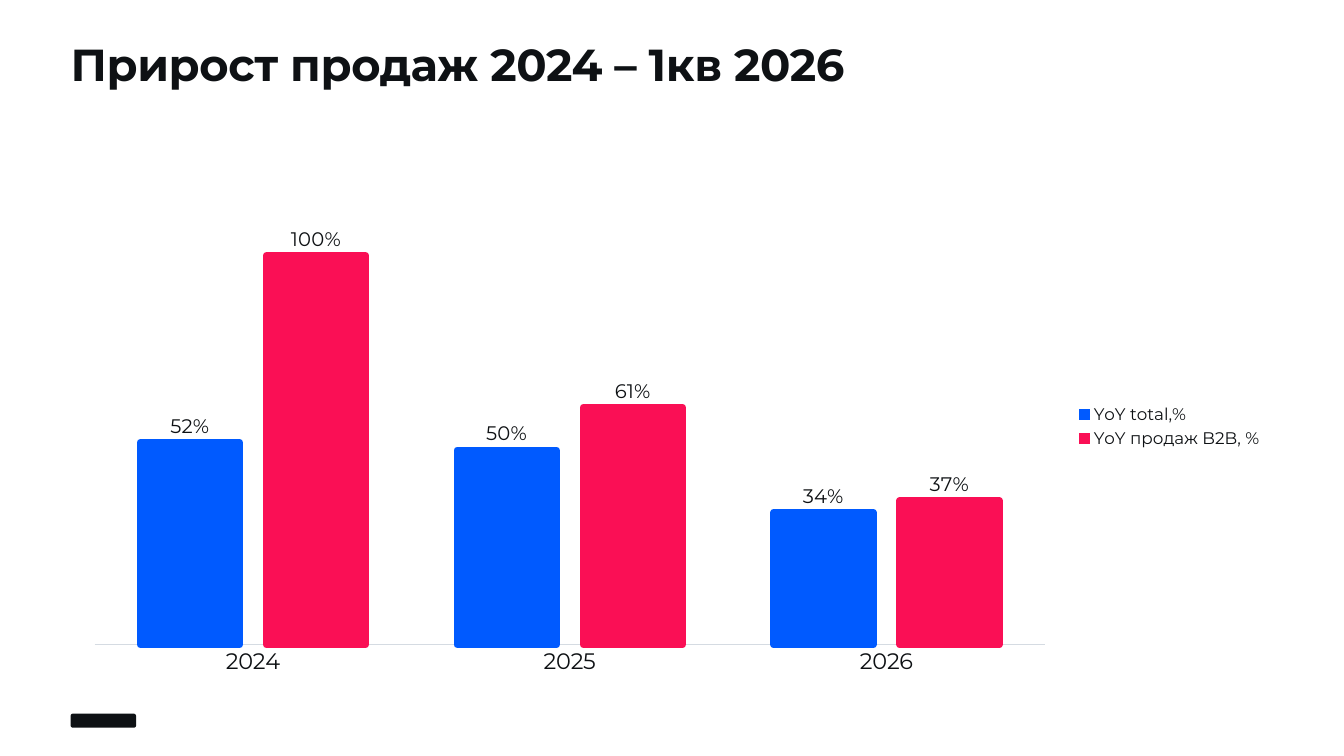
from lxml import etree
from pptx import Presentation
from pptx.chart.data import CategoryChartData as ChartData
from pptx.dml.color import RGBColor
from pptx.enum.chart import XL_CHART_TYPE as ChartType
from pptx.enum.chart import XL_LABEL_POSITION as LabelPosition
from pptx.enum.chart import XL_LEGEND_POSITION as LegendPosition
from pptx.enum.chart import XL_TICK_LABEL_POSITION as TickLabels
from pptx.enum.chart import XL_TICK_MARK as TickMark
from pptx.enum.shapes import MSO_SHAPE as Shape
from pptx.enum.text import MSO_ANCHOR as Anchor
from pptx.enum.text import MSO_AUTO_SIZE as AutoSize
from pptx.enum.text import PP_ALIGN as Align
from pptx.oxml.ns import qn
from pptx.util import Inches, Pt

INK = RGBColor(0x0E, 0x11, 0x14)
WHITE = RGBColor(0xFF, 0xFF, 0xFF)
AXIS_GREY = RGBColor(0xD5, 0xDB, 0xE2)
BLUE = RGBColor(0x00, 0x5A, 0xFF)
PINK = RGBColor(0xFA, 0x0F, 0x55)
FONT = "Montserrat"

YEARS = ["2024", "2025", "2026"]
GROWTH = [
    ("YoY total,%", [0.52, 0.50, 0.34], BLUE),
    ("YoY продаж B2B, %", [1.00, 0.61, 0.37], PINK),
]


def style_font(font, size, bold=False):
    font.name = FONT
    font.size = Pt(size)
    font.bold = bold
    font.color.rgb = INK


def fill_title(title, left, top, width, height):
    title.left, title.top = Inches(left), Inches(top)
    title.width, title.height = Inches(width), Inches(height)
    frame = title.text_frame
    frame.margin_left = frame.margin_right = 0
    frame.margin_top = frame.margin_bottom = 0
    frame.vertical_anchor = Anchor.TOP
    frame.auto_size = AutoSize.NONE
    frame.word_wrap = True
    heading = frame.paragraphs[0]
    heading.alignment = Align.LEFT
    heading.line_spacing = 0.85
    run = heading.add_run()
    run.text = "Прирост продаж 2024 – 1кв 2026"
    style_font(run.font, 32, bold=True)
    run.font._element.set("spc", "-30")


def fix_plot_area(chart, left, top, width, height):
    plot_area = chart._chartSpace.chart.plotArea
    for old in plot_area.findall(qn("c:layout")):
        plot_area.remove(old)
    layout = etree.Element(qn("c:layout"))
    manual = etree.SubElement(layout, qn("c:manualLayout"))
    settings = [("layoutTarget", "inner"), ("xMode", "edge"), ("yMode", "edge"),
                ("x", left), ("y", top), ("w", width), ("h", height)]
    for tag, value in settings:
        etree.SubElement(manual, qn(f"c:{tag}")).set("val", str(value))
    plot_area.insert(0, layout)


def style_axes(chart):
    years = chart.category_axis
    years.major_tick_mark = years.minor_tick_mark = TickMark.NONE
    years.tick_label_position = TickLabels.NEXT_TO_AXIS
    years.has_major_gridlines = False
    years.format.line.color.rgb = AXIS_GREY
    years.format.line.width = Pt(0.75)
    style_font(years.tick_labels.font, 16)
    growth = chart.value_axis
    growth.minimum_scale, growth.maximum_scale = 0, 1.2
    growth.has_major_gridlines = False
    growth.visible = False


def style_bars(bars, color):
    bars.smooth = False if hasattr(bars, "smooth") else None
    bars.invert_if_negative = False
    bars.format.fill.solid()
    bars.format.fill.fore_color.rgb = color
    bars.format.line.color.rgb = color
    bars.format.line.width = Pt(5)
    etree.SubElement(bars.format.line._ln, qn("a:round"))
    labels = bars.data_labels
    labels.show_value = True
    labels.number_format = "0%"
    labels.number_format_is_linked = False
    labels.position = LabelPosition.OUTSIDE_END
    style_font(labels.font, 14)


def add_growth_chart(slide, left, top, width, height):
    data = ChartData(number_format="0%")
    data.categories = YEARS
    for name, values, _ in GROWTH:
        data.add_series(name, values)
    chart = slide.shapes.add_chart(
        ChartType.COLUMN_CLUSTERED, Inches(left), Inches(top),
        Inches(width), Inches(height), data).chart
    style_font(chart.font, 10)
    chart.has_title = False
    chart.has_legend = True
    chart.legend.position = LegendPosition.RIGHT
    chart.legend.include_in_layout = False
    style_font(chart.legend.font, 12)
    style_axes(chart)
    plot = chart.plots[0]
    plot.vary_by_categories = False
    plot.gap_width, plot.overlap = 92, -27
    for bars, (_, _, color) in zip(plot.series, GROWTH):
        style_bars(bars, color)
    fix_plot_area(chart, 0.02, 0.02, 0.79, 0.9)


def add_footer_mark(slide, left, top, width, height):
    mark = slide.shapes.add_shape(
        Shape.ROUNDED_RECTANGLE, Inches(left), Inches(top),
        Inches(width), Inches(height))
    mark.shadow.inherit = False
    mark.fill.solid()
    mark.fill.fore_color.rgb = INK
    mark.line.fill.background()


def build_growth_slide(deck):
    slide = deck.slides.add_slide(deck.slide_layouts[5])
    slide.background.fill.solid()
    slide.background.fill.fore_color.rgb = WHITE
    add_footer_mark(slide, 0.7, 7.08, 0.65, 0.14)
    add_growth_chart(slide, 0.7, 1.66, 11.93, 5.15)
    fill_title(slide.shapes.title, 0.7, 0.45, 11.93, 0.75)


def main():
    deck = Presentation()
    deck.slide_width, deck.slide_height = Inches(13.33), Inches(7.5)
    build_growth_slide(deck)
    deck.save("out.pptx")


if __name__ == "__main__":
    main()
